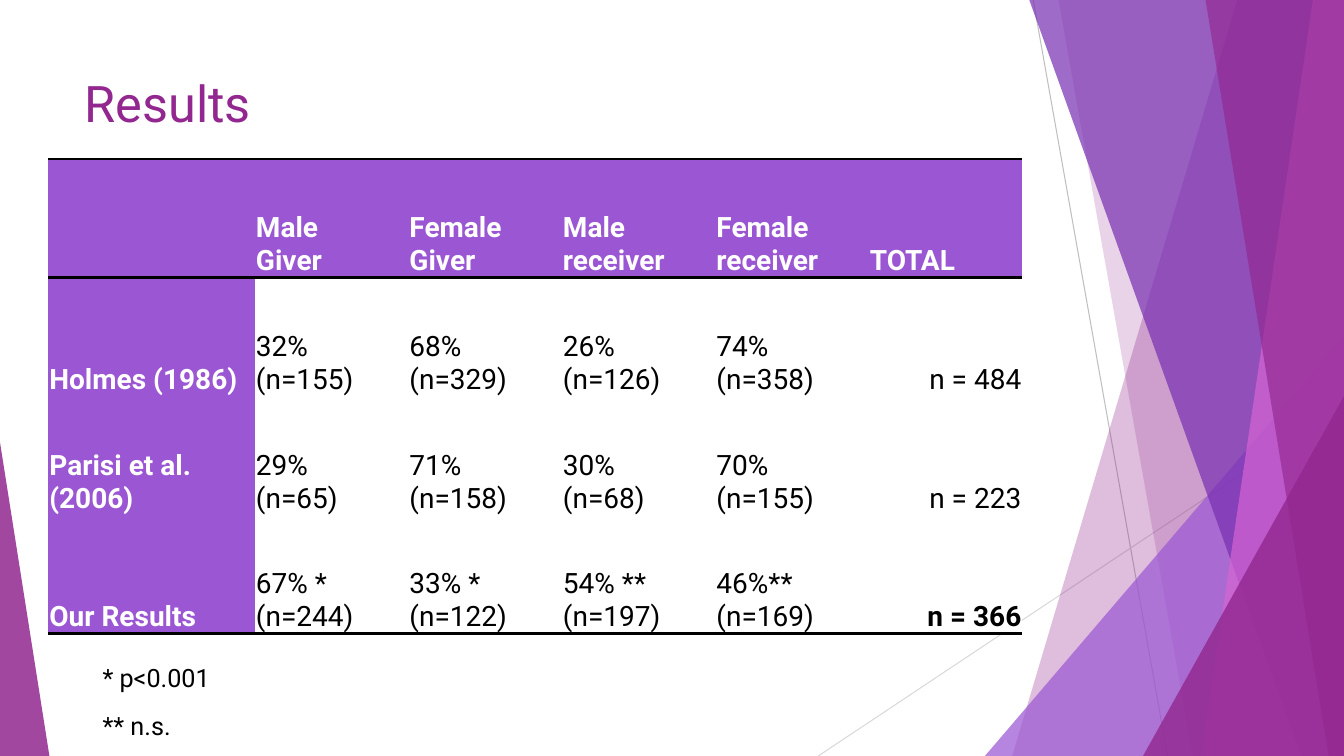
import pptx
import pptx.dml.color
import pptx.enum.shapes
import pptx.enum.text
import pptx.oxml
import pptx.oxml.ns
import pptx.util

Pt = pptx.util.Pt
RGBColor = pptx.dml.color.RGBColor
MSO_SHAPE = pptx.enum.shapes.MSO_SHAPE
ALIGN = pptx.enum.text.PP_ALIGN
ANCHOR = pptx.enum.text.MSO_ANCHOR
qn = pptx.oxml.ns.qn

PLUM = RGBColor(0x92, 0x27, 0x8F)
VIOLET = RGBColor(0x9B, 0x57, 0xD3)
INDIGO = RGBColor(0x76, 0x2E, 0xB1)
PINK = RGBColor(0xD6, 0x65, 0xD3)
GREY = RGBColor(0xBF, 0xBF, 0xBF)
LIGHT_GREY = RGBColor(0xD9, 0xD9, 0xD9)
WHITE = RGBColor(0xFF, 0xFF, 0xFF)
BLACK = RGBColor(0, 0, 0)
FONT = "Roboto"
NO_STYLE_NO_GRID = "{2D5ABB26-0587-4C30-8999-92F81FD0307C}"
WIDTH, HEIGHT = 960, 540


def write(paragraph, text, size, color, bold=False):
    run = paragraph.add_run()
    run.text = text
    run.font.name = FONT
    run.font.size = Pt(size)
    run.font.bold = bold
    run.font.color.rgb = color


def paint(shape, color, opacity):
    """Fill with a translucent colour, without outline or shadow."""
    shape.shadow.inherit = False
    shape.line.fill.background()
    shape.fill.solid()
    shape.fill.fore_color.rgb = color
    clr = shape._element.spPr.find(qn("a:solidFill"))[0]
    clr.makeelement(qn("a:alpha"), {})
    alpha = pptx.oxml.parse_xml(
        f'<a:alpha {pptx.oxml.ns.nsdecls("a")} val="{opacity * 1000}"/>')
    clr.append(alpha)


presentation = pptx.Presentation()
presentation.slide_width, presentation.slide_height = Pt(WIDTH), Pt(HEIGHT)
slide = presentation.slides.add_slide(presentation.slide_layouts[5])
shapes = slide.shapes

# Decoration: two thin lines, then overlapping shards
for x1, y1, x2, y2, color in [(738, 0, 834, HEIGHT, GREY),
                              (WIDTH, 290, 584.5, HEIGHT, LIGHT_GREY)]:
    ray = shapes.add_connector(pptx.enum.shapes.MSO_CONNECTOR.STRAIGHT,
                               Pt(x1), Pt(y1), Pt(x2), Pt(y2))
    ray.line.color.rgb = color
    ray.line.width = Pt(0.75)
    effects = pptx.oxml.parse_xml(f'<a:effectLst {pptx.oxml.ns.nsdecls("a")}/>')
    ray._element.spPr.append(effects)

# A pair is the top and bottom x of a shard reaching the right edge;
# a box is left, top, width, height and apex of a triangle.
shards = [
    ((884, 723), PLUM, 30),
    ((756, 852), PLUM, 20),
    ((703.5, 240, 256.5, 300, 1), VIOLET, 72),
    ((735, 929.5), INDIGO, 70),
    ((938, 858), PINK, 70),
    ((861, 949), PLUM, 65),
    ((816.5, 283, 143.5, 257, 1), PLUM, 80),
    ((0, 316, 35.3, 224, 0), PLUM, 85),
]
for geometry, color, opacity in shards:
    if len(geometry) == 2:
        top_x, bottom_x = geometry
        outline = shapes.build_freeform(Pt(top_x), Pt(-0.7))
        outline.add_line_segments([(Pt(WIDTH), Pt(-0.7)), (Pt(WIDTH), Pt(HEIGHT)),
                                   (Pt(bottom_x), Pt(HEIGHT))])
        shard = outline.convert_to_shape()
    else:
        *box, apex = geometry
        shard = shapes.add_shape(MSO_SHAPE.ISOSCELES_TRIANGLE, *map(Pt, box))
        shard.adjustments[0] = apex
    paint(shard, color, opacity)

title = shapes.title
title.left, title.top, title.width, title.height = map(Pt, (53.3, 48, 677, 104))
title.text_frame.vertical_anchor = ANCHOR.TOP
title.text_frame.paragraphs[0].alignment = ALIGN.LEFT
write(title.text_frame.paragraphs[0], "Results", 36, PLUM)

results = [
    ["", "Male\nGiver", "Female\nGiver", "Male receiver", "Female receiver", "TOTAL"],
    ["Holmes (1986)", "32%\n(n=155)", "68%\n(n=329)", "26%\n(n=126)",
     "74%\n(n=358)", "n = 484"],
    ["Parisi et al. (2006)", "29%\n(n=65)", "71%\n(n=158)", "30%\n(n=68)",
     "70%\n(n=155)", "n = 223"],
    ["Our Results", "67% *\n(n=244)", "33% *\n(n=122)", "54% **\n(n=197)",
     "46%**\n(n=169)", "n = 366"],
]
last_row, last_column = len(results) - 1, len(results[0]) - 1
frame = shapes.add_table(len(results), len(results[0]),
                         Pt(34.5), Pt(113.5), Pt(696), Pt(339.2))
table = frame.table
table.first_row = table.horz_banding = False
table._tbl.tblPr.find(qn("a:tableStyleId")).text = NO_STYLE_NO_GRID
for c, column in enumerate(table.columns):
    column.width = Pt(147.6 if c == 0 else 109.65)
for r, row in enumerate(table.rows):
    row.height = Pt(84.8)
    rules = {0: ["lnT", "lnB"], last_row: ["lnB"]}.get(r, [])
    for c, cell in enumerate(row.cells):
        for rule in rules:
            cell._tc.get_or_add_tcPr().append(pptx.oxml.parse_xml(
                f'<a:{rule} {pptx.oxml.ns.nsdecls("a")} w="{Pt(2)}">'
                f'<a:solidFill><a:srgbClr val="{BLACK}"/></a:solidFill></a:{rule}>'))
        heading = r == 0 or c == 0
        cell.fill.solid()
        cell.fill.fore_color.rgb = VIOLET if heading else WHITE
        cell.vertical_anchor = ANCHOR.BOTTOM
        cell.margin_left = cell.margin_right = cell.margin_top = Pt(0.75)
        cell.margin_bottom = 0
        if not results[r][c]:
            continue
        bold = heading or (r, c) == (last_row, last_column)
        for i, line in enumerate(results[r][c].split("\n")):
            text = cell.text_frame
            paragraph = text.add_paragraph() if i else text.paragraphs[0]
            if c == last_column and r > 0:
                paragraph.alignment = ALIGN.RIGHT
            write(paragraph, line, 20, WHITE if heading else BLACK, bold)

for i, note in enumerate(["* p<0.001", "** n.s."]):
    footnote = shapes.add_textbox(Pt(66.2), Pt(469.5 + 34.5 * i), Pt(357), Pt(29))
    footnote.text_frame.word_wrap = True
    footnote.text_frame.auto_size = pptx.enum.text.MSO_AUTO_SIZE.SHAPE_TO_FIT_TEXT
    write(footnote.text_frame.paragraphs[0], note, 18, BLACK)

presentation.save("out.pptx")
